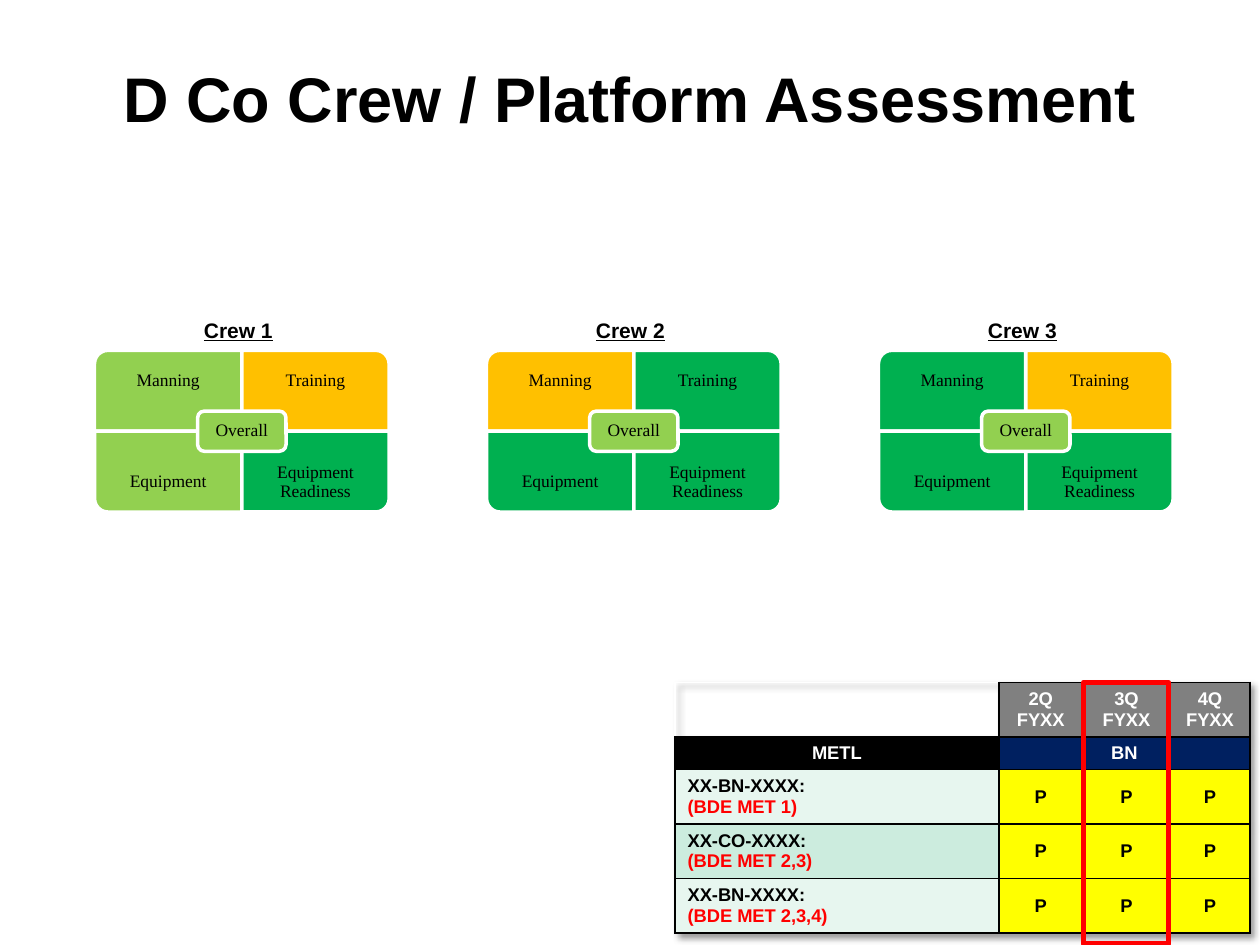
from lxml import etree
from pptx import Presentation
from pptx import util as u
from pptx.dml.color import RGBColor
from pptx.enum import shapes, text
from pptx.oxml import parse_xml
from pptx.oxml.ns import qn

Pt = u.Pt
CENTER, LEFT = text.PP_ALIGN.CENTER, text.PP_ALIGN.LEFT
MIDDLE = text.MSO_ANCHOR.MIDDLE
A = "http://schemas.openxmlformats.org/drawingml/2006/main"
LIME, GREEN, AMBER = "92D050", "00B050", "FFC000"


def rgb(value):
    return RGBColor.from_string(value)


def apply(obj, values):
    for name, value in values.items():
        setattr(obj, name, value)


def margins(x, y):
    return {"margin_left": Pt(x), "margin_right": Pt(x),
            "margin_top": Pt(y), "margin_bottom": Pt(y)}


def write(tf, lines, size, font="Arial", align=CENTER, spacing=None, **style):
    for i, (line, color) in enumerate(lines):
        p = tf.paragraphs[0] if i == 0 else tf.add_paragraph()
        apply(p, {"alignment": align, "line_spacing": spacing})
        r = p.add_run()
        r.text = line
        apply(r.font, {"name": font, "size": Pt(size), **style})
        r.font.color.rgb = rgb(color)


def add_text(slide, box, line, size, inset=(7.2, 3.6), wrap=True, **style):
    tf = slide.shapes.add_textbox(*map(Pt, box)).text_frame
    apply(tf, {"word_wrap": wrap, "vertical_anchor": MIDDLE, **margins(*inset)})
    write(tf, [(line, "000000")], size, **style)


def add_box(slide, kind, box, fill, line, width, turn=0):
    x, y, w, h = box
    if turn % 180:
        x, y, w, h = x + (w - h) / 2, y + (h - w) / 2, h, w
    sp = slide.shapes.add_shape(kind, Pt(x), Pt(y), Pt(w), Pt(h))
    sp.shadow.inherit = False
    sp.rotation = turn
    if fill:
        sp.fill.solid()
        sp.fill.fore_color.rgb = rgb(fill)
    else:
        sp.fill.background()
    sp.line.color.rgb = rgb(line)
    sp.line.width = Pt(width)


def add_crew(slide, box, name, colors):
    x, y, w, h = box
    half_w, half_h, text_h = w / 2, h / 2, 34.5
    style = {"font": "Times New Roman", "spacing": 0.9}
    names = ["Manning", "Training", "Equipment", "Equipment Readiness"]
    for i, (label, color, turn) in enumerate(zip(names, colors, [270, 0, 180, 90])):
        row, col = divmod(i, 2)
        left, top = x + col * half_w, y + row * half_h
        add_box(slide, shapes.MSO_SHAPE.ROUND_1_RECTANGLE,
                (left, top, half_w, half_h), color, "FFFFFF", 2, turn)
        add_text(slide, (left, top + row * (half_h - text_h), half_w, text_h),
                 label, 10, (5.76, 5.76), **style)
    badge = (x + half_w - 25.25, y + half_h - 11.5, 50.5, 23)
    add_box(slide, shapes.MSO_SHAPE.ROUNDED_RECTANGLE, badge, LIME, "FFFFFF", 2)
    add_text(slide, badge, "Overall", 10, (2.88, 2.88), **style)
    add_text(slide, (x + half_w - 29, y - 22.4, 54, 21.8), name, 12,
             wrap=False, bold=True, underline=True)


def add_borders(cell, sides):
    pr = cell._tc.get_or_add_tcPr()
    for i, side in enumerate(s for s in "LRTB" if s in sides):
        ln = etree.Element(qn(f"a:ln{side}"), w=str(Pt(1)))
        fill = etree.SubElement(ln, qn("a:solidFill"))
        etree.SubElement(fill, qn("a:srgbClr"), val="000000")
        pr.insert(i, ln)


def fill_cell(cell, lines, fill, align=CENTER, sides="LRTB", inset=(7.2, 3)):
    apply(cell, {"vertical_anchor": MIDDLE, **margins(*inset)})
    if fill:
        cell.fill.solid()
        cell.fill.fore_color.rgb = rgb(fill)
    else:
        cell.fill.background()
    write(cell.text_frame, lines, 10.5, align=align, bold=True)
    add_borders(cell, sides)


def add_metl_table(slide, box, tasks):
    x, y, w, h = box
    cols, rows = [185, 48, 50, 45.5], [31, 18.5] + [30.5] * len(tasks)
    table = slide.shapes.add_table(len(rows), len(cols), *map(Pt, box)).table
    apply(table, {"first_row": False, "horz_banding": False})
    for col, width in zip(table.columns, cols):
        col.width = Pt(width)
    for row, height in zip(table.rows, rows):
        row.height = Pt(height)
    table._tbl.tblPr.insert(0, parse_xml(
        f'<a:effectLst xmlns:a="{A}"><a:outerShdw blurRad="50800" dist="38100" '
        'dir="2700000" algn="tl"><a:srgbClr val="000000"><a:alpha val="40000"/>'
        '</a:srgbClr></a:outerShdw></a:effectLst>'))
    fill_cell(table.cell(0, 0), [], None, sides="RB")
    fill_cell(table.cell(1, 0), [("METL", "FFFFFF")], "000000")
    table.cell(1, 1).merge(table.cell(1, 3))
    for c in range(1, 4):
        fill_cell(table.cell(0, c), [(f"{c + 1}Q FYXX", "FFFFFF")], "808080")
        fill_cell(table.cell(1, c), [("BN", "FFFFFF")] if c == 1 else [], "002060")
    for i, (task, met) in enumerate(tasks):
        r = i + 2
        fill_cell(table.cell(r, 0), [(task, "000000"), (met, "FF0000")],
                  "CCECDE" if i % 2 else "E7F6EF", LEFT)
        for c in range(1, 4):
            fill_cell(table.cell(r, c), [("P", "000000")], "FFFF00", inset=(3.6, 3))
    add_box(slide, shapes.MSO_SHAPE.RECTANGLE,
            (x + sum(cols[:2]) + 0.5, y, 48.5, 149.5), None, "FF0000", 3)


def main():
    prs = Presentation()
    apply(prs, {"slide_width": Pt(720), "slide_height": Pt(540)})
    slide = prs.slides.add_slide(prs.slide_layouts[6])
    add_text(slide, (36, 21.6, 648, 68.4), "D Co Crew / Platform Assessment", 36,
             bold=True)
    add_metl_table(slide, (385.75, 390, 328.5, 141), [
        ("XX-BN-XXXX:", "(BDE MET 1)"),
        ("XX-CO-XXXX:", "(BDE MET 2,3)"),
        ("XX-BN-XXXX:", "(BDE MET 2,3,4)"),
    ])
    crews = [
        (LIME, AMBER, LIME, GREEN),
        (AMBER, GREEN, GREEN, GREEN),
        (GREEN, AMBER, GREEN, GREEN),
    ]
    for i, colors in enumerate(crews):
        add_crew(slide, (54 + i * 224, 200.2, 168.4, 92.4), f"Crew {i + 1}", colors)
    prs.save("out.pptx")


if __name__ == "__main__":
    main()
